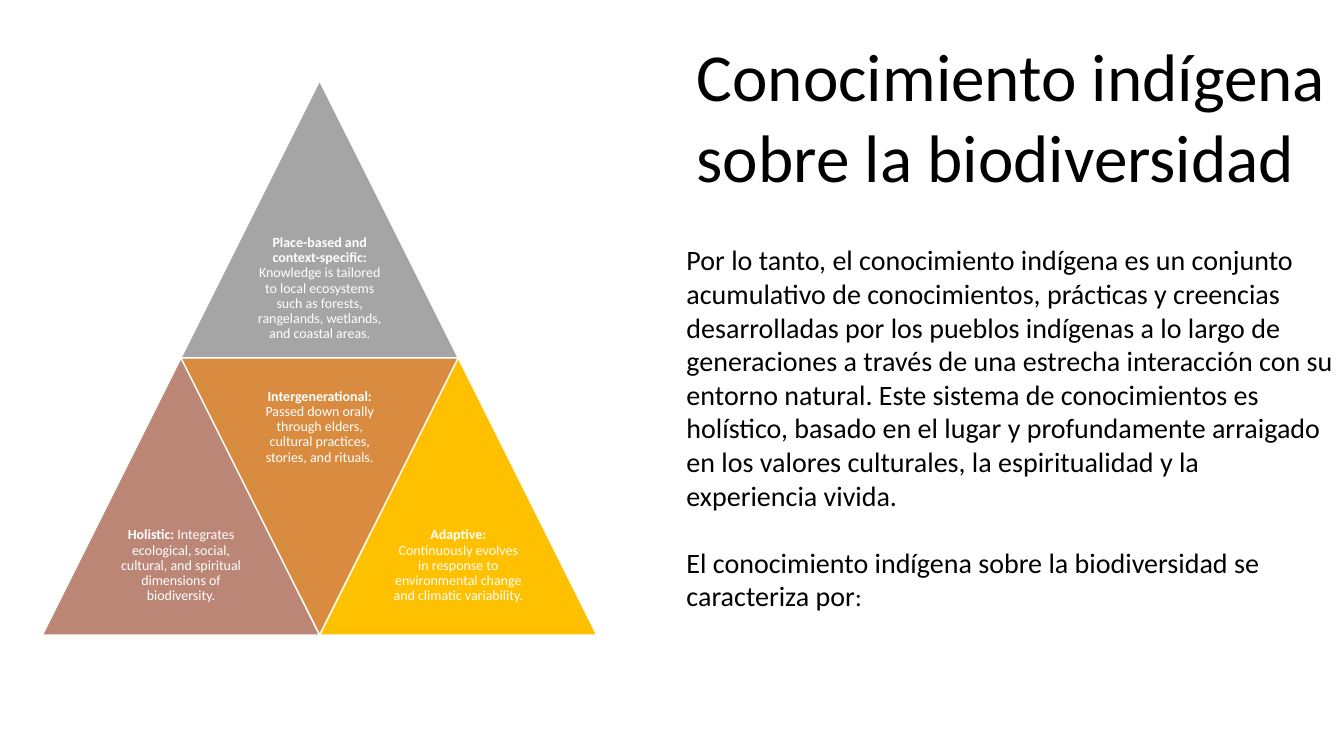
from pptx import Presentation
from pptx.dml.color import RGBColor
from pptx.enum.shapes import MSO_SHAPE
from pptx.enum.text import MSO_ANCHOR, MSO_AUTO_SIZE, PP_ALIGN
from pptx.util import Inches, Pt

TITLE = "Conocimiento indígena sobre la biodiversidad"
# Each paragraph is a list of (text, size) runs
BODY = [
    [("Por lo tanto, el conocimiento indígena es un conjunto acumulativo de "
      "conocimientos, prácticas y creencias desarrolladas por los pueblos indígenas "
      "a lo largo de generaciones a través de una estrecha interacción con su entorno "
      "natural. Este sistema de conocimientos es holístico, basado en el lugar y "
      "profundamente arraigado en los valores culturales, la espiritualidad y la "
      "experiencia vivida.", 20)],
    [("El conocimiento indígena sobre la biodiversidad se caracteriza por", 20),
     (":", 18)],
]
# (heading, detail, fill, column in half sides, row, points down)
TRAITS = [
    ("Place-based and context-specific:",
     " Knowledge is tailored to local ecosystems such as forests, rangelands, "
     "wetlands, and coastal areas.", "A5A5A5", 1, 0, False),
    ("Holistic:",
     " Integrates ecological, social, cultural, and spiritual dimensions of "
     "biodiversity.", "BB8676", 0, 1, False),
    ("Intergenerational:",
     " Passed down orally through elders, cultural practices, stories, and rituals.",
     "D98B3F", 1, 1, True),
    ("Adaptive:",
     " Continuously evolves in response to environmental change and climatic "
     "variability.", "FFC000", 2, 1, False),
]
PYRAMID_LEFT, PYRAMID_TOP, SIDE = 0.42, 0.8, 2.75
HALF = SIDE / 2


def color(hex_code):
    return RGBColor.from_string(hex_code)


def add_run(paragraph, text, size, ink="000000", bold=False):
    run = paragraph.add_run()
    run.text = text
    run.font.name = "Calibri"
    run.font.size = Pt(size)
    run.font.bold = bold
    run.font.color.rgb = color(ink)


def add_trait(slide, heading, detail, fill, column, row, points_down):
    left = PYRAMID_LEFT + column * HALF
    top = PYRAMID_TOP + row * SIDE
    triangle = slide.shapes.add_shape(
        MSO_SHAPE.ISOSCELES_TRIANGLE,
        Inches(left), Inches(top), Inches(SIDE), Inches(SIDE))
    triangle.rotation = 180 if points_down else 0
    triangle.shadow.inherit = False
    triangle.fill.solid()
    triangle.fill.fore_color.rgb = color(fill)
    triangle.line.color.rgb = color("FFFFFF")
    triangle.line.width = Pt(1)

    # The label fills the square beside the triangle's base
    label_top = top if points_down else top + HALF
    label = slide.shapes.add_textbox(
        Inches(left + HALF / 2), Inches(label_top), Inches(HALF), Inches(HALF)).text_frame
    label.word_wrap = True
    label.vertical_anchor = MSO_ANCHOR.MIDDLE
    label.margin_left = label.margin_right = Inches(0.04)
    label.margin_top = label.margin_bottom = Inches(0.04)
    paragraph = label.paragraphs[0]
    paragraph.alignment = PP_ALIGN.CENTER
    paragraph.line_spacing = 0.9
    add_run(paragraph, heading, 10, "FFFFFF", bold=True)
    add_run(paragraph, detail, 10, "FFFFFF")


def main():
    deck = Presentation()
    deck.slide_width, deck.slide_height = Inches(13.33), Inches(7.5)
    slide = deck.slides.add_slide(deck.slide_layouts[5])

    title = slide.shapes.title
    title.left, title.top = Inches(6.81), Inches(0.29)
    title.width, title.height = Inches(6.52), Inches(2.02)
    heading = title.text_frame
    heading.word_wrap = True
    heading.auto_size = MSO_AUTO_SIZE.NONE
    heading.vertical_anchor = MSO_ANCHOR.TOP
    heading.paragraphs[0].alignment = PP_ALIGN.LEFT
    add_run(heading.paragraphs[0], TITLE, 48)

    body = slide.shapes.add_textbox(
        Inches(6.71), Inches(2.36), Inches(6.62), Inches(4.09)).text_frame
    body.word_wrap = True
    for index, runs in enumerate(BODY):
        paragraph = body.add_paragraph() if index else body.paragraphs[0]
        if index:
            paragraph.space_before = Pt(24)
        for text, size in runs:
            add_run(paragraph, text, size)

    for trait in TRAITS:
        add_trait(slide, *trait)

    deck.save("out.pptx")


if __name__ == "__main__":
    main()
